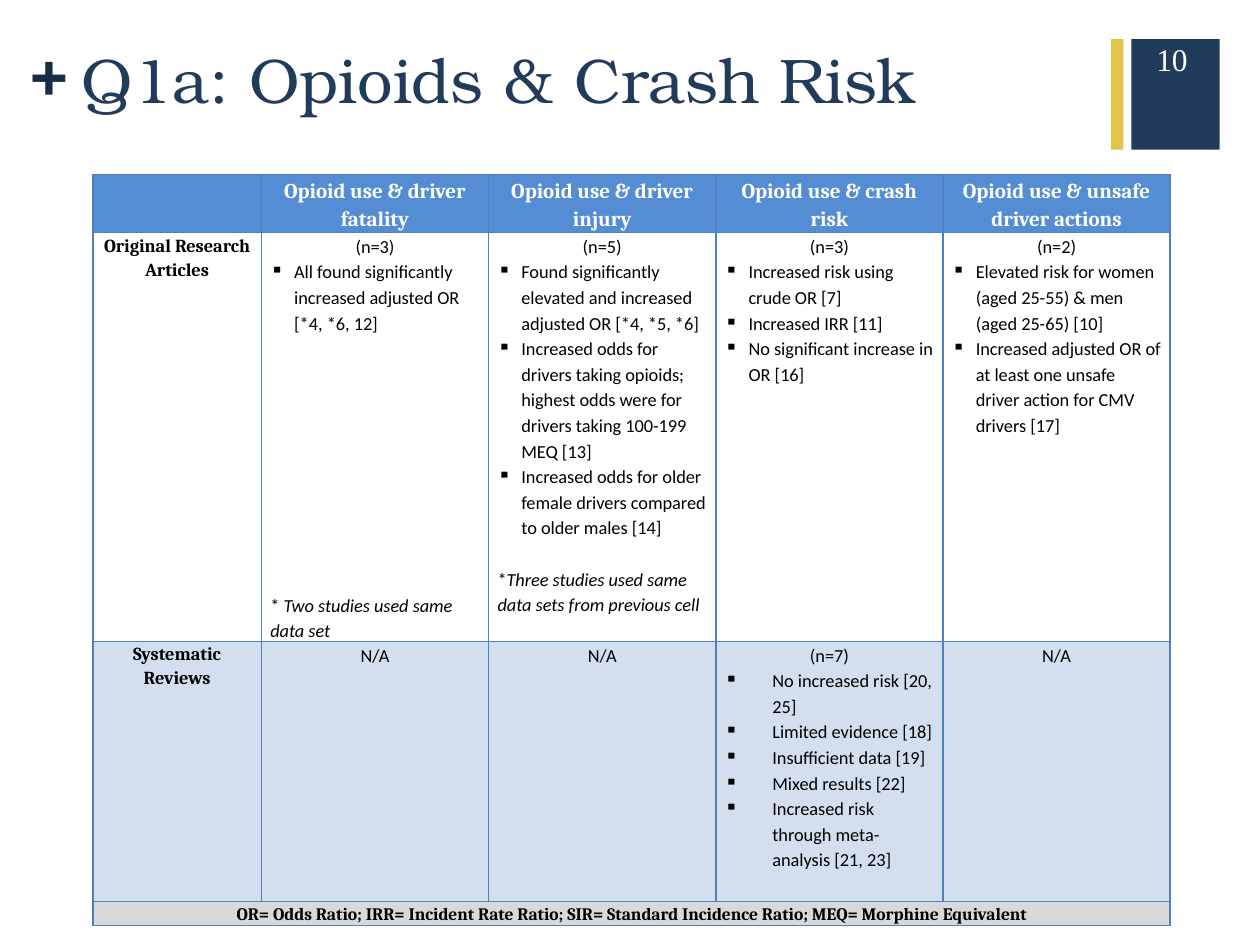
"""Build the slide on opioids and crash risk with its evidence table."""
from pptx import Presentation
from pptx.dml.color import RGBColor
from pptx.enum.shapes import MSO_SHAPE
from pptx.enum.text import MSO_ANCHOR, PP_ALIGN
from pptx.oxml.xmlchemy import OxmlElement
from pptx.util import Cm, Pt

THEME = {
    "navy": "203C5A", "gold": "E2C446", "border": "4F81BD",
    "header": "548DD4", "review": "D3DFEE", "legend": "D9D9D9",
    "fonts": {
        "title": {"name": "TeX Gyre Bonum", "size": Pt(36), "bold": False, "color": "203C5A"},
        "plus": {"name": "TeX Gyre Bonum", "size": Pt(36), "bold": True, "color": "182D44"},
        "number": {"name": "Times New Roman", "size": Pt(18), "bold": False, "color": "FFFFFF"},
        "heading": {"name": "Cambria", "size": Pt(12), "bold": True, "color": "FFFFFF"},
        "label": {"name": "Cambria", "size": Pt(10.5), "bold": True, "color": "000000"},
        "body": {"name": "Calibri", "size": Pt(10.5), "bold": False, "color": "000000"},
        "legend": {"name": "Cambria", "size": Pt(10), "bold": True, "color": "000000"},
    },
}
SLIDE_SIZE = Cm(25.4), Cm(19.05)
TABLE_LEFT, TABLE_TOP = Cm(1.87), Cm(3.52)
COLUMN_WIDTHS = [Cm(3.4)] + [Cm(4.58)] * 4
LINE_PITCH = Pt(14.66)
NO_INSETS = dict.fromkeys(("margin_left", "margin_top", "margin_right", "margin_bottom"), 0)
CELL_INSETS = NO_INSETS | {"margin_left": Cm(0.18), "margin_right": Cm(0.18)}

BLOCKS = [
    ("navy", (22.81, 0.79, 1.78, 2.23)),
    ("gold", (22.4, 0.79, 0.25, 2.23)),
]
CAPTIONS = [
    ("+", "plus", (0.61, 0.64, 0.71, 1.55), NO_INSETS),
    ("Q1a: Opioids & Crash Risk", "title", (1.4, 0.69, 20.98, 1.65), {}),
    ("10", "number", (23.06, 0.69, 1.55, 1.02), {}),
]
HEADINGS = ["", "Opioid use & driver fatality", "Opioid use & driver injury",
            "Opioid use & crash risk", "Opioid use & unsafe driver actions"]
ARTICLES = [
    {"count": "(n=3)",
     "findings": ["All found significantly increased adjusted OR [*4, *6, 12]"],
     "footnote": ("* ", "Two studies used same data set"), "gap_lines": 10},
    {"count": "(n=5)",
     "findings": ["Found significantly elevated and increased adjusted OR [*4, *5, *6]",
                  "Increased odds for drivers taking opioids; highest odds were for "
                  "drivers taking 100-199 MEQ [13]",
                  "Increased odds for older female drivers compared to older males [14]"],
     "footnote": ("*", "Three studies used same data sets from previous cell"), "gap_lines": 1},
    {"count": "(n=3)",
     "findings": ["Increased risk using crude OR [7]", "Increased IRR [11]",
                  "No significant increase in OR [16]"]},
    {"count": "(n=2)",
     "findings": ["Elevated risk for women (aged 25-55) & men (aged 25-65) [10]",
                  "Increased adjusted OR of at least one unsafe driver action for "
                  "CMV drivers [17]"]},
]
REVIEWS = [
    {"count": "N/A"},
    {"count": "N/A"},
    {"count": "(n=7)",
     "findings": ["No increased risk [20, 25]", "Limited evidence [18]",
                  "Insufficient data [19]", "Mixed results [22]",
                  "Increased risk through meta-analysis [21, 23]"]},
    {"count": "N/A"},
]
LEGEND = ("OR= Odds Ratio; IRR= Incident Rate Ratio; SIR= Standard Incidence Ratio; "
          "MEQ= Morphine Equivalent")
ROWS = [
    {"height": Cm(1.1), "fill": "header", "style": "heading", "texts": HEADINGS},
    {"height": Cm(8.24), "fill": None, "label": "Original Research Articles",
     "evidence": ARTICLES, "indent": Cm(0.48)},
    {"height": Cm(5.24), "fill": "review", "label": "Systematic Reviews",
     "evidence": REVIEWS, "indent": Cm(0.96)},
    {"height": Cm(0.46), "fill": "legend", "style": "legend", "texts": [LEGEND] + [""] * 4},
]


def apply_format(target, values):
    for attribute, value in values.items():
        if attribute == "color":
            target.color.rgb = RGBColor.from_string(value)
        else:
            setattr(target, attribute, value)


def add_run(paragraph, text, style, **changes):
    run = paragraph.add_run()
    run.text = text
    apply_format(run.font, THEME["fonts"][style] | changes)


def write_centred(paragraph, text, style):
    apply_format(paragraph, {"alignment": PP_ALIGN.CENTER, "line_spacing": 1.15})
    if text:
        add_run(paragraph, text, style)
    else:
        end_mark = OxmlElement("a:endParaRPr")
        end_mark.set("sz", str(THEME["fonts"][style]["size"].centipoints))
        paragraph._p.append(end_mark)


def write_finding(paragraph, text, indent):
    paragraph.line_spacing = 1.15
    properties = paragraph._p.get_or_add_pPr()
    properties.set("marL", str(indent))
    properties.set("indent", str(-indent))
    bullet = OxmlElement("a:buChar")
    bullet.set("char", "▪")
    properties.append(bullet)
    add_run(paragraph, text, "body")


def write_evidence(frame, evidence, indent):
    write_centred(frame.paragraphs[0], evidence["count"], "body")
    for finding in evidence.get("findings", []):
        write_finding(frame.add_paragraph(), finding, indent)
    if "footnote" in evidence:
        mark, note = evidence["footnote"]
        footnote = frame.add_paragraph()
        apply_format(footnote, {"line_spacing": 1.15,
                                "space_before": LINE_PITCH * evidence["gap_lines"]})
        add_run(footnote, mark, "body")
        add_run(footnote, note, "body", italic=True)


def format_cell(cell, fill):
    apply_format(cell, CELL_INSETS)
    properties = cell._tc.get_or_add_tcPr()
    for side in ("lnL", "lnR", "lnT", "lnB"):
        border = OxmlElement(f"a:{side}")
        border.set("w", str(Pt(1)))
        solid, color = OxmlElement("a:solidFill"), OxmlElement("a:srgbClr")
        color.set("val", THEME["border"])
        solid.append(color)
        border.append(solid)
        properties.append(border)
    if fill:
        cell.fill.solid()
        cell.fill.fore_color.rgb = RGBColor.from_string(THEME[fill])
    else:
        cell.fill.background()


def add_evidence_table(slide):
    table = slide.shapes.add_table(
        len(ROWS), len(COLUMN_WIDTHS), TABLE_LEFT, TABLE_TOP,
        sum(COLUMN_WIDTHS), sum(row["height"] for row in ROWS)).table
    apply_format(table, {"first_row": False, "horz_banding": False})
    for column, width in zip(table.columns, COLUMN_WIDTHS):
        column.width = width
    for table_row, row in zip(table.rows, ROWS):
        table_row.height = row["height"]
        cells = list(table_row.cells)
        for cell in cells:
            format_cell(cell, row["fill"])
        if "texts" in row:
            for cell, text in zip(cells, row["texts"]):
                write_centred(cell.text_frame.paragraphs[0], text, row["style"])
        else:
            write_centred(cells[0].text_frame.paragraphs[0], row["label"], "label")
            for cell, evidence in zip(cells[1:], row["evidence"]):
                write_evidence(cell.text_frame, evidence, row["indent"])
    for heading in table.rows[0].cells:
        heading.vertical_anchor = MSO_ANCHOR.MIDDLE
    legend_row = len(ROWS) - 1
    table.cell(legend_row, 0).merge(table.cell(legend_row, len(COLUMN_WIDTHS) - 1))


def main():
    deck = Presentation()
    deck.slide_width, deck.slide_height = SLIDE_SIZE
    slide = deck.slides.add_slide(deck.slide_layouts[6])
    for color, place in BLOCKS:
        block = slide.shapes.add_shape(MSO_SHAPE.RECTANGLE, *map(Cm, place))
        block.shadow.inherit = False
        block.fill.solid()
        block.fill.fore_color.rgb = RGBColor.from_string(THEME[color])
        block.line.fill.background()
    for text, style, place, insets in CAPTIONS:
        frame = slide.shapes.add_textbox(*map(Cm, place)).text_frame
        apply_format(frame, {"word_wrap": True} | insets)
        add_run(frame.paragraphs[0], text, style)
    add_evidence_table(slide)
    deck.save("out.pptx")


if __name__ == "__main__":
    main()
